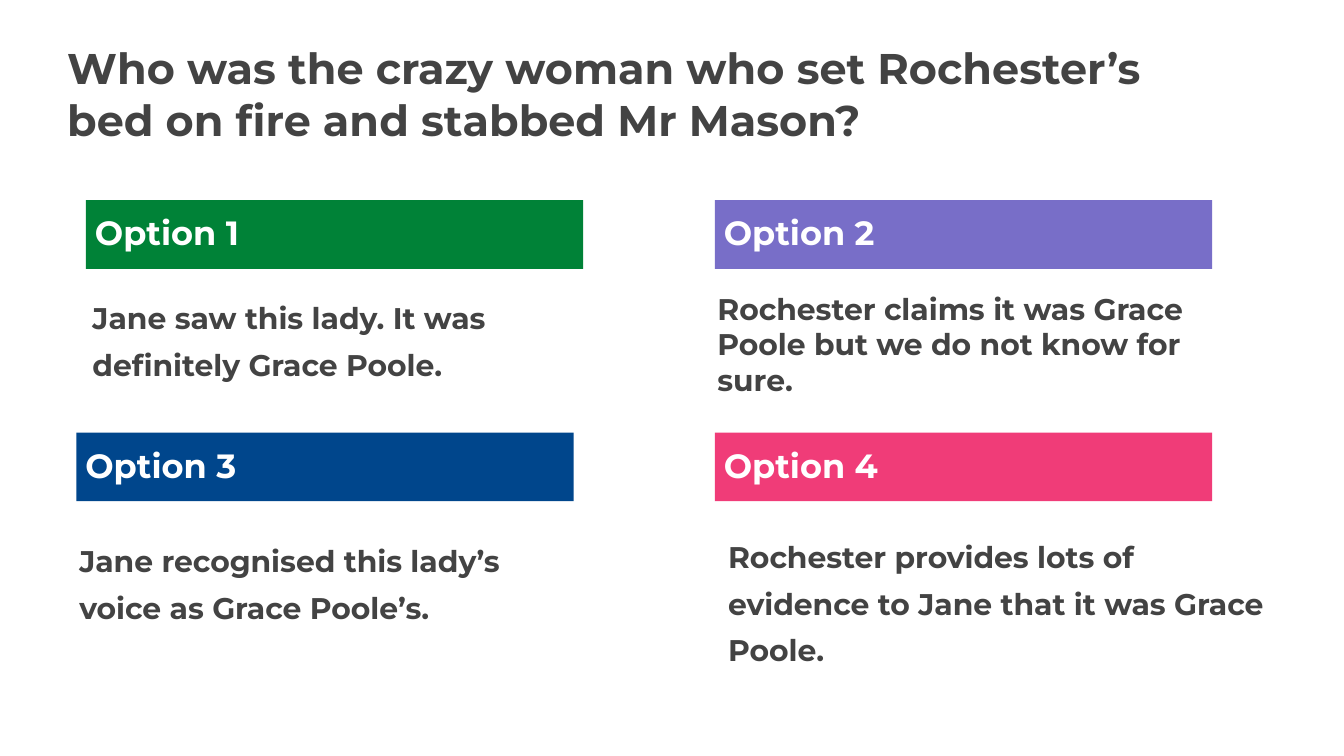
from pptx import Presentation
from pptx.dml.color import RGBColor
from pptx.enum.shapes import MSO_SHAPE
from pptx.enum.text import MSO_ANCHOR, PP_ALIGN
from pptx.util import Pt

RECTANGLE = MSO_SHAPE.RECTANGLE
TOP = MSO_ANCHOR.TOP
LEFT = PP_ALIGN.LEFT

FONT = "Montserrat"
DARK = "434343"
WHITE = "FFFFFF"
BAR_WIDTH, BAR_HEIGHT = 266.4, 36.8
UPPER_BAR_TOP, LOWER_BAR_TOP = 107.3, 231.8
RIGHT_BAR_LEFT = 383
LABEL_INSET = 4.8
ANSWER_INSET = 7.2
LOOSE = 1.3

# Label, bar colour, bar left, bar top
BARS = [
    ("Option 1", "008237", 46.1, UPPER_BAR_TOP),
    ("Option 2", "786EC8", RIGHT_BAR_LEFT, UPPER_BAR_TOP),
    ("Option 3", "00468C", 41, LOWER_BAR_TOP),
    ("Option 4", "F03C78", RIGHT_BAR_LEFT, LOWER_BAR_TOP),
]

# Text, (left, top, width, height), left inset, line spacing
ANSWERS = [
    ("Jane saw this lady. It was definitely Grace Poole.",
     (42.5, 154.8, 261.4, 30.2), ANSWER_INSET, LOOSE),
    ("Rochester claims it was Grace Poole but we do not know for sure.",
     (377.3, 155.5, 266.4, 58.3), ANSWER_INSET, 1),
    ("Jane recognised this lady’s voice as Grace Poole’s.",
     (42.5, 285.1, 261.4, 71.3), 0, LOOSE),
    ("Rochester provides lots of evidence to Jane that it was Grace Poole.",
     (383, 283, 295.9, 41.8), ANSWER_INSET, LOOSE),
]


def rgb(value):
    return RGBColor.from_string(value)


def write_text(shape, text, size, color, inset=0, spacing=1):
    """Fill a shape with one bold, left-aligned paragraph."""
    frame = shape.text_frame
    frame.text = text
    frame.word_wrap = True
    frame.vertical_anchor = TOP
    frame.margin_left = Pt(inset)
    frame.margin_top = frame.margin_right = frame.margin_bottom = 0
    paragraph = frame.paragraphs[0]
    paragraph.alignment = LEFT
    paragraph.line_spacing = spacing
    font = paragraph.runs[0].font
    font.name = FONT
    font.size = Pt(size)
    font.bold = True
    font.color.rgb = rgb(color)


def add_text(slide, text, box, size, inset=0, spacing=1):
    shape = slide.shapes.add_textbox(*(Pt(length) for length in box))
    write_text(shape, text, size, DARK, inset, spacing)


def add_bar(slide, label, color, left, top):
    bar = slide.shapes.add_shape(
        RECTANGLE, Pt(left), Pt(top), Pt(BAR_WIDTH), Pt(BAR_HEIGHT))
    bar.shadow.inherit = False
    bar.fill.solid()
    bar.fill.fore_color.rgb = rgb(color)
    bar.line.fill.background()
    write_text(bar, label, 18, WHITE, LABEL_INSET, LOOSE)


def main():
    presentation = Presentation()
    presentation.slide_width = Pt(720)
    presentation.slide_height = Pt(405)
    slide = presentation.slides.add_slide(presentation.slide_layouts[6])
    add_text(
        slide,
        "Who was the crazy woman who set Rochester’s bed on fire "
        "and stabbed Mr Mason?",
        (36, 22.3, 624.2, 64.1), 23)
    for label, color, left, top in BARS:
        add_bar(slide, label, color, left, top)
    for text, box, inset, spacing in ANSWERS:
        add_text(slide, text, box, 16, inset, spacing)
    presentation.save("out.pptx")


if __name__ == "__main__":
    main()
